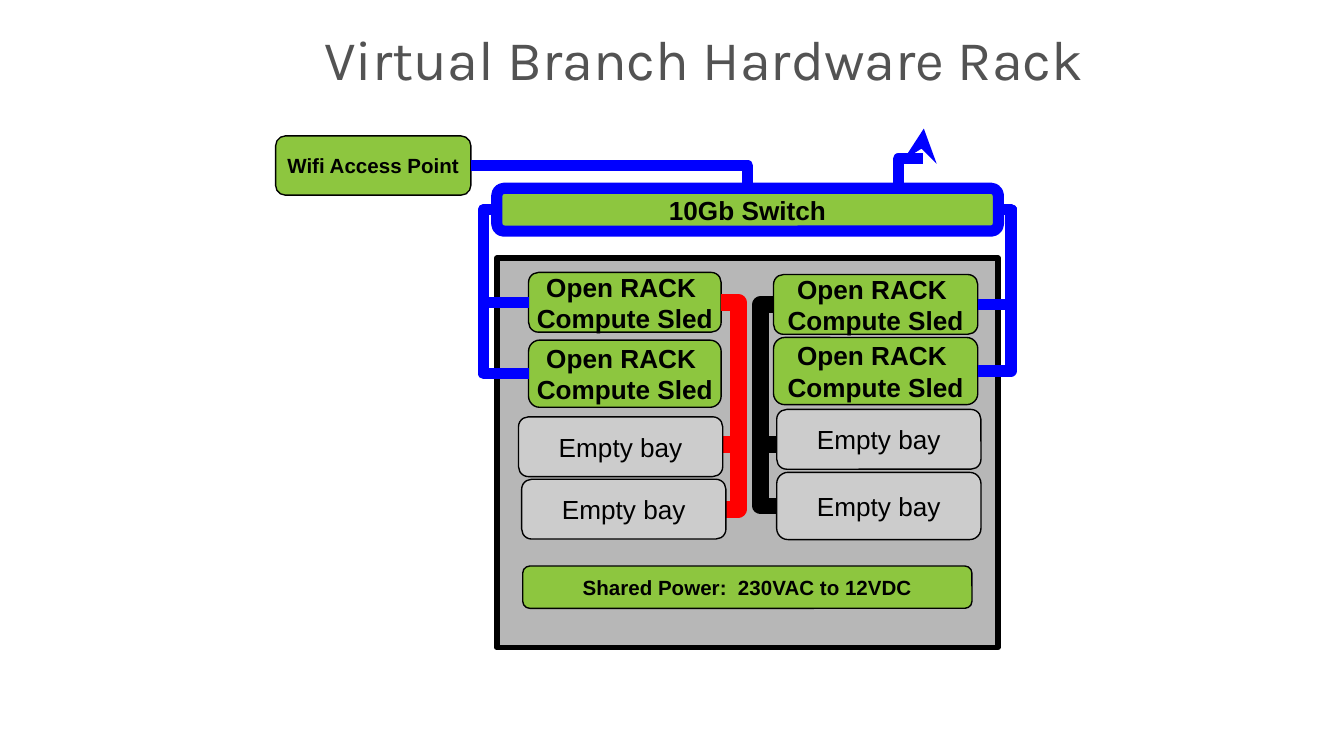
from typing import NamedTuple

from lxml import etree
from pptx import Presentation
from pptx.dml.color import RGBColor
from pptx.enum.shapes import MSO_CONNECTOR, MSO_SHAPE
from pptx.enum.text import MSO_ANCHOR, PP_ALIGN
from pptx.oxml.ns import qn
from pptx.util import Cm, Pt

RECTANGLE = MSO_SHAPE.RECTANGLE
ROUNDED = MSO_SHAPE.ROUNDED_RECTANGLE
ELBOW = MSO_CONNECTOR.ELBOW
STRAIGHT = MSO_CONNECTOR.STRAIGHT
CENTER = PP_ALIGN.CENTER
MIDDLE = MSO_ANCHOR.MIDDLE

BLACK = RGBColor(0x00, 0x00, 0x00)
BLUE = RGBColor(0x00, 0x00, 0xFF)
RED = RGBColor(0xFF, 0x00, 0x00)
GREEN = RGBColor(0x8D, 0xC6, 0x3F)
RACK_GRAY = RGBColor(0xB7, 0xB7, 0xB7)
BAY_GRAY = RGBColor(0xCC, 0xCC, 0xCC)
TITLE_GRAY = RGBColor(0x53, 0x53, 0x53)

NETWORK_WIDTH = 6
POWER_WIDTH = 9
SLED_TEXT = "Open RACK \nCompute Sled"


class Box(NamedTuple):
    left: float
    top: float
    width: float
    height: float
    text: str = ""
    fill: RGBColor = GREEN
    size: int = 14
    line: RGBColor = BLACK
    line_width: float = 0.75
    preset: int = ROUNDED

    @property
    def right(self) -> float:
        return self.left + self.width

    @property
    def middle(self) -> float:
        return self.top + self.height / 2


class Cable(NamedTuple):
    start_x: float
    start_y: float
    end_x: float
    end_y: float
    color: RGBColor = BLUE
    width: float = NETWORK_WIDTH
    lane: float | None = None


RACK = Box(9.39, 4.88, 9.47, 7.36, fill=RACK_GRAY, line_width=3, preset=RECTANGLE)
SWITCH = Box(9.39, 3.56, 9.48, 0.81, "10Gb Switch", line=BLUE, line_width=6)
LEFT_SLEDS = [Box(9.99, 5.15, 3.64, 1.13, SLED_TEXT), Box(9.99, 6.43, 3.64, 1.27, SLED_TEXT)]
RIGHT_SLEDS = [Box(14.62, 5.19, 3.86, 1.13, SLED_TEXT), Box(14.62, 6.38, 3.86, 1.27, SLED_TEXT)]
POWER = Box(9.88, 10.7, 8.49, 0.8, "Shared Power:  230VAC to 12VDC", size=11)
WIFI = Box(5.21, 2.57, 3.69, 1.12, "Wifi Access Point", size=11)
RIGHT_BAYS = [Box(14.68, 7.74, 3.86, 1.13, "Empty bay", BAY_GRAY),
              Box(14.68, 8.93, 3.86, 1.27, "Empty bay", BAY_GRAY)]
LEFT_BAYS = [Box(9.8, 7.88, 3.86, 1.13, "Empty bay", BAY_GRAY),
             Box(9.86, 9.06, 3.86, 1.13, "Empty bay", BAY_GRAY)]

NETWORK_CABLES = [
    *(Cable(SWITCH.left, SWITCH.middle, sled.left, sled.middle, lane=9.14) for sled in LEFT_SLEDS),
    *(Cable(SWITCH.right, SWITCH.middle, sled.right, sled.middle, lane=19.11) for sled in RIGHT_SLEDS),
]
POWER_CABLES = [
    Cable(LEFT_SLEDS[0].right, LEFT_SLEDS[0].middle, LEFT_BAYS[1].right, LEFT_BAYS[1].middle,
          RED, POWER_WIDTH, 13.95),
    Cable(RIGHT_SLEDS[0].left, RIGHT_SLEDS[0].middle, RIGHT_BAYS[1].left, RIGHT_BAYS[1].middle,
          BLACK, POWER_WIDTH, 14.38),
    Cable(14.33, 8.4, 14.73, 8.4, BLACK, POWER_WIDTH),
    Cable(13.59, 8.4, 13.97, 8.4, RED, POWER_WIDTH),
]
UPLINK = Cable(16.65, 2.76, 17.79, 3.24, lane=17.22)
WIFI_CABLE = Cable(WIFI.right, WIFI.middle, 14.13, SWITCH.top, lane=14.13)


def style_line(shape, color: RGBColor, width: float):
    """Colour a line, round its joins and return its XML element."""
    shape.line.color.rgb = color
    shape.line.width = Pt(width)
    line = shape.line._get_or_add_ln()
    etree.SubElement(line, qn("a:round"))
    return line


def draw_box(slide, box: Box) -> None:
    """Draw a rack part with its centred label."""
    shape = slide.shapes.add_shape(
        box.preset, Cm(box.left), Cm(box.top), Cm(box.width), Cm(box.height))
    shape.shadow.inherit = False
    shape.fill.solid()
    shape.fill.fore_color.rgb = box.fill
    style_line(shape, box.line, box.line_width)
    if not box.text:
        return
    frame = shape.text_frame
    frame.word_wrap = True
    frame.vertical_anchor = MIDDLE
    frame.margin_left = frame.margin_right = Cm(0.04)
    frame.margin_top = frame.margin_bottom = Cm(0.1)
    frame.text = box.text
    for paragraph in frame.paragraphs:
        paragraph.alignment = CENTER
        for run in paragraph.runs:
            run.font.name = "Arial"
            run.font.size = Pt(box.size)
            run.font.bold = box.fill == GREEN
            run.font.color.rgb = BLACK


def draw_cable(slide, cable: Cable, preset: str = "bentConnector3",
               rotation: int = 0, arrow: bool = False) -> None:
    """Draw a straight cable, or a bent one that runs along its lane."""
    connector = slide.shapes.add_connector(
        STRAIGHT if cable.lane is None else ELBOW,
        Cm(cable.start_x), Cm(cable.start_y), Cm(cable.end_x), Cm(cable.end_y))
    properties = connector._element.spPr
    if cable.lane is not None:
        geometry = properties.find(qn("a:prstGeom"))
        geometry.set("prst", preset)
        if preset == "bentConnector3":
            share = (cable.lane - cable.start_x) / (cable.end_x - cable.start_x)
            guides = geometry.find(qn("a:avLst"))
            etree.SubElement(guides, qn("a:gd"), name="adj1", fmla=f"val {round(share * 100000)}")
    if rotation:
        properties.find(qn("a:xfrm")).set("rot", str(rotation * 60000))
    line = style_line(connector, cable.color, cable.width)
    if arrow:
        etree.SubElement(line, qn("a:tailEnd"), type="stealth")
    etree.SubElement(properties, qn("a:effectLst"))


def draw_title(slide, text: str) -> None:
    """Write the slide title."""
    shape = slide.shapes.add_textbox(Cm(2.36), Cm(0.51), Cm(21.9), Cm(1.4))
    frame = shape.text_frame
    frame.word_wrap = True
    frame.margin_left = frame.margin_right = Cm(0.18)
    frame.margin_top = frame.margin_bottom = Cm(0.1)
    frame.text = text
    paragraph = frame.paragraphs[0]
    paragraph.alignment = CENTER
    paragraph.line_spacing = 0.9
    font = paragraph.runs[0].font
    font.name = "Karla"
    font.size = Pt(30)
    font.color.rgb = TITLE_GRAY


def main() -> None:
    """Build the rack slide and save it."""
    presentation = Presentation()
    presentation.slide_width = Cm(25.4)
    presentation.slide_height = Cm(14.29)
    slide = presentation.slides.add_slide(presentation.slide_layouts[6])
    for box in [RACK, *LEFT_SLEDS, SWITCH, *RIGHT_SLEDS]:
        draw_box(slide, box)
    for cable in NETWORK_CABLES + POWER_CABLES:
        draw_cable(slide, cable)
    draw_box(slide, POWER)
    draw_box(slide, WIFI)
    draw_cable(slide, UPLINK, rotation=270, arrow=True)
    for box in RIGHT_BAYS + LEFT_BAYS:
        draw_box(slide, box)
    draw_cable(slide, WIFI_CABLE, preset="bentConnector2")
    draw_title(slide, "Virtual Branch Hardware Rack")
    presentation.save("out.pptx")


if __name__ == "__main__":
    main()
